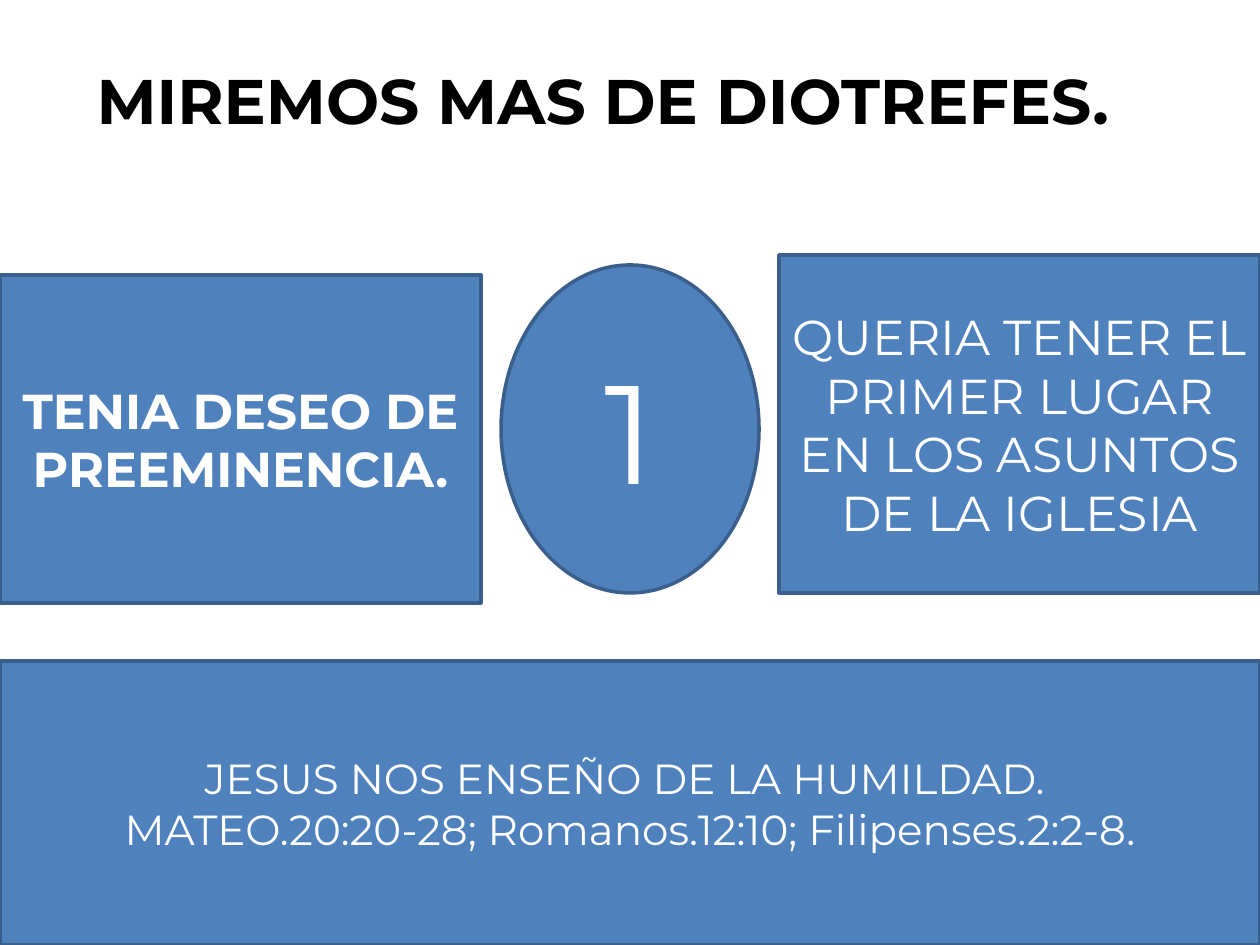
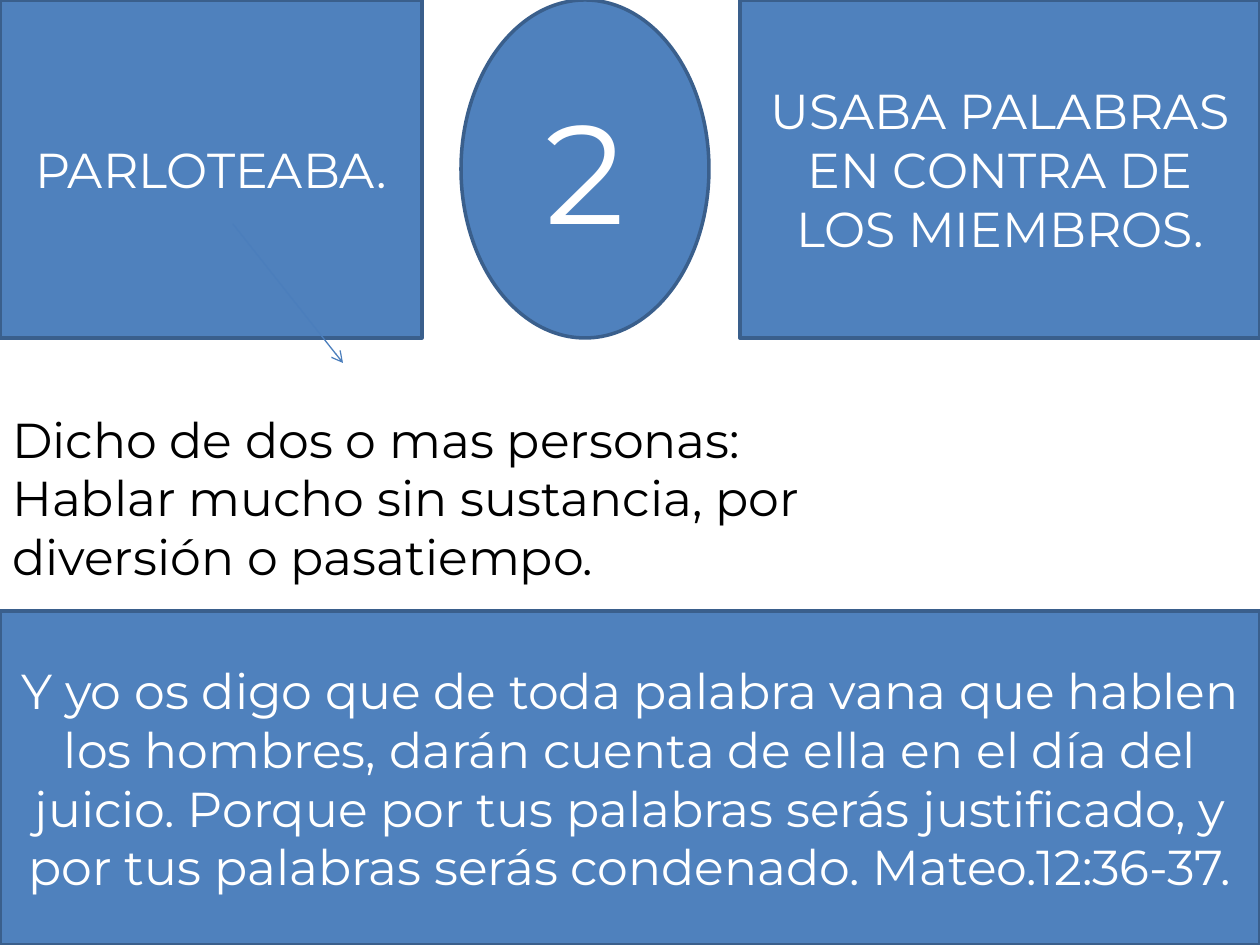
from lxml import etree
from pptx import Presentation
from pptx.dml.color import RGBColor
from pptx.enum.shapes import MSO_CONNECTOR, MSO_SHAPE
from pptx.enum.text import MSO_ANCHOR, MSO_AUTO_SIZE, PP_ALIGN
from pptx.oxml.ns import qn
from pptx.util import Emu, Pt

WIDTH, HEIGHT = 1260, 945
FONT = "Montserrat"
BLUE = RGBColor(0x4F, 0x81, 0xBD)
EDGE = RGBColor(0x3A, 0x5F, 0x8C)
ARROW = RGBColor(0x4B, 0x7E, 0xBC)
WHITE = RGBColor(0xFF, 0xFF, 0xFF)
BLACK = RGBColor(0x00, 0x00, 0x00)
RECT, OVAL = MSO_SHAPE.RECTANGLE, MSO_SHAPE.OVAL
LEFT, CENTER = PP_ALIGN.LEFT, PP_ALIGN.CENTER
TOP, MIDDLE = MSO_ANCHOR.TOP, MSO_ANCHOR.MIDDLE
TITLE_ONLY, BLANK = 5, 6


def px(*sizes):
    return [Emu(round(size * 914400 / 126)) for size in sizes]


def write(shape, text, size=28, color=WHITE, bold=False, align=CENTER, anchor=MIDDLE):
    """Fill a shape with text, one paragraph a line."""
    frame = shape.text_frame
    frame.text = text
    frame.word_wrap = True
    frame.auto_size = MSO_AUTO_SIZE.NONE
    frame.vertical_anchor = anchor
    for para in frame.paragraphs:
        para.alignment = align
        for run in para.runs:
            font = run.font
            font.name, font.size, font.bold = FONT, Pt(size), bold
            font.color.rgb = color


def title(slide, box, text):
    shape = slide.shapes.title
    shape.left, shape.top, shape.width, shape.height = px(*box)
    write(shape, text, size=36, color=BLACK, bold=True, align=LEFT, anchor=TOP)


def panel(slide, box, text, kind=RECT, **style):
    shape = slide.shapes.add_shape(kind, *px(*box))
    shape.shadow.inherit = False
    shape.fill.solid()
    shape.fill.fore_color.rgb = BLUE
    shape.line.color.rgb = EDGE
    shape.line.width = Pt(2)
    write(shape, text, **style)


def band(slide, top, text, **style):
    """Full-width panel from top to the foot of the slide."""
    panel(slide, (0, top, WIDTH, HEIGHT - top), text, **style)


def trio(slide, box, fault, number, detail, widths, gap, step=0, bold=False):
    """Fault, number and detail side by side, each starting step px higher."""
    left, top, width, height = box
    first, mid, last = widths
    panel(slide, (left, top, first, height), fault, bold=bold)
    panel(slide, (left + first + gap, top - step, mid, height), number, OVAL, size=80)
    panel(slide, (left + width - last, top - 2 * step, last, height + step), detail)


def note(slide, box, text):
    write(slide.shapes.add_textbox(*px(*box)), text, color=BLACK, align=LEFT, anchor=TOP)


def arrow(slide, start, end):
    line = slide.shapes.add_connector(MSO_CONNECTOR.STRAIGHT, *px(*start, *end))
    line.line.color.rgb = ARROW
    line.line.width = Pt(0.75)
    props = line._element.spPr
    etree.SubElement(props.find(qn("a:ln")), qn("a:tailEnd"), type="arrow")
    etree.SubElement(props, qn("a:effectLst"))


def pride(deck):
    slide = deck.slides.add_slide(deck.slide_layouts[TITLE_ONLY])
    title(slide, (84, 55, 1101, 89), "MIREMOS MAS DE DIOTREFES.")
    trio(slide, (0, 275, WIDTH, 328), "TENIA DESEO DE PREEMINENCIA.", "1",
         "QUERIA TENER EL PRIMER LUGAR EN LOS ASUNTOS DE LA IGLESIA",
         widths=(481, 258, 481), gap=20, step=10, bold=True)
    band(slide, 661, "JESUS NOS ENSEÑO DE LA HUMILDAD. \n"
         "MATEO.20:20-28; Romanos.12:10; Filipenses.2:2-8.", size=24)


def gossip(deck):
    slide = deck.slides.add_slide(deck.slide_layouts[BLANK])
    trio(slide, (0, 0, WIDTH, 338), "PARLOTEABA.", "2",
         "USABA PALABRAS EN CONTRA DE LOS MIEMBROS.",
         widths=(422, 248, 520), gap=39)
    note(slide, (0, 403, 868, 190), "Dicho de dos o mas personas: Hablar mucho "
         "sin sustancia, por diversión o pasatiempo.")
    band(slide, 611, "Y yo os digo que de toda palabra vana que hablen los hombres, "
         "darán cuenta de ella en el día del juicio. Porque por tus palabras serás "
         "justificado, y por tus palabras serás condenado. Mateo.12:36-37.")
    arrow(slide, (233, 224), (343, 363))


def main():
    deck = Presentation()
    deck.slide_width, deck.slide_height = px(WIDTH, HEIGHT)
    pride(deck)
    gossip(deck)
    deck.save("out.pptx")


if __name__ == "__main__":
    main()
